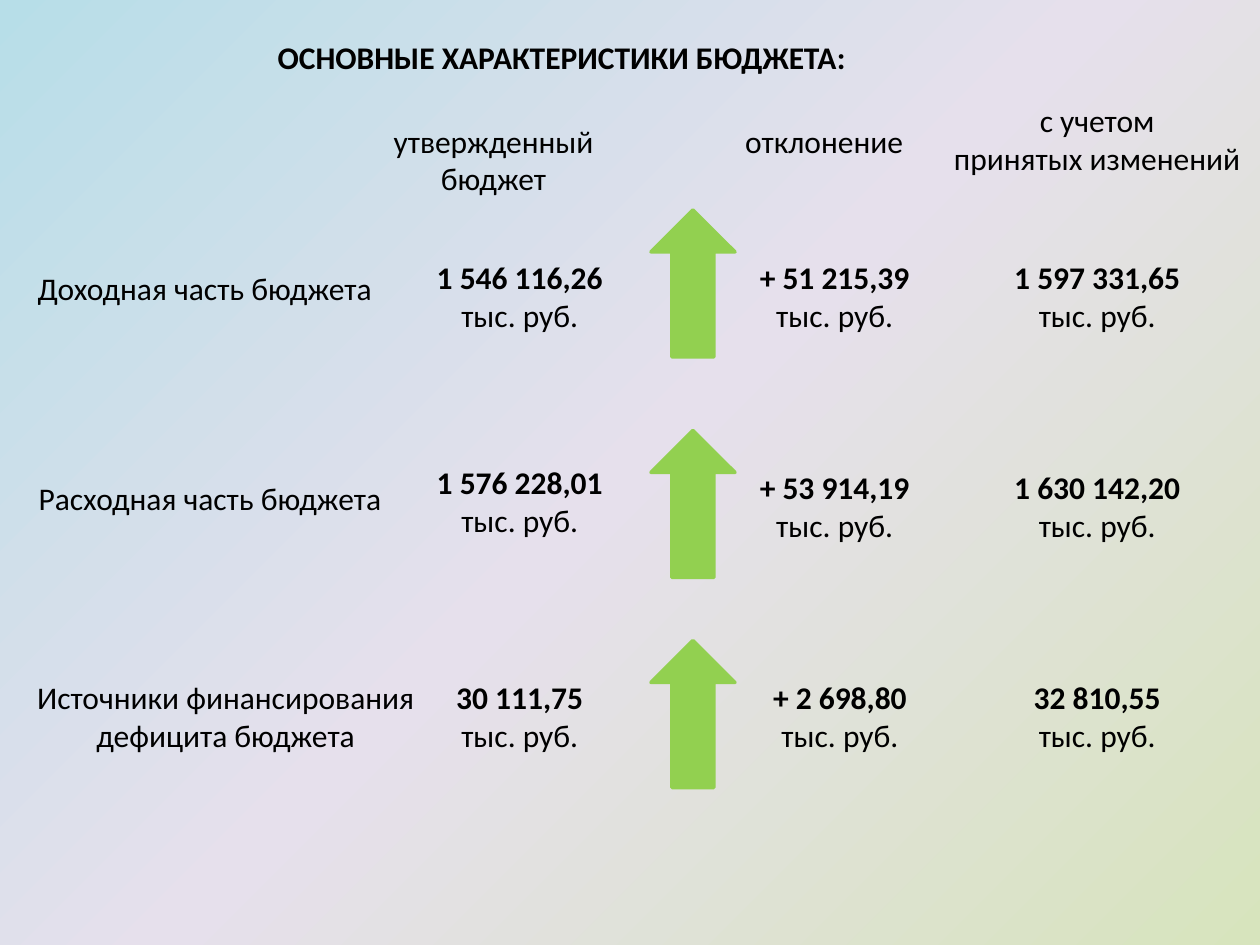
from lxml import etree
from pptx import Presentation
from pptx.dml.color import RGBColor
from pptx.enum.shapes import MSO_SHAPE
from pptx.enum.text import MSO_AUTO_SIZE, PP_ALIGN
from pptx.oxml.ns import qn
from pptx.util import Pt

UP_ARROW = MSO_SHAPE.UP_ARROW
CENTER = PP_ALIGN.CENTER
FIT_SHAPE = MSO_AUTO_SIZE.SHAPE_TO_FIT_TEXT

FONT = "Calibri"
FONT_SIZE = 18
BLACK = "000000"
GREEN = "92D050"
GRADIENT = [(0, "D7E4BD"), (50, "E6E0EC"), (100, "B7DEE8")]
UNIT = "тыс. руб."

TITLE = ("ОСНОВНЫЕ ХАРАКТЕРИСТИКИ БЮДЖЕТА:", 150, 18, 342)
HEADINGS = [
    (["утвержденный бюджет"], 198, 66, 168),
    (["отклонение"], 414, 66, 114),
    (["с учетом", "принятых изменений"], 534, 54, 186),
]
LABEL_LEFT = 12
ARROW_LEFT, ARROW_WIDTH, ARROW_HEIGHT = 372, 48, 84
ROWS = [
    {
        "label": ("Доходная часть бюджета", 150, 210),
        "arrow_top": 120,
        "amounts": [
            ("1 546 116,26", 240, 144, 114),
            ("+ 51 215,39", 426, 144, 102),
            ("1 597 331,65", 558, 144, 138),
        ],
    },
    {
        "label": ("Расходная часть бюджета", 270, 216),
        "arrow_top": 246,
        "amounts": [
            ("1 576 228,01", 240, 261, 114),
            ("+ 53 914,19", 426, 264, 102),
            ("1 630 142,20", 570, 264, 114),
        ],
    },
    {
        "label": ("Источники финансирования дефицита бюджета", 384, 234),
        "arrow_top": 366,
        "amounts": [
            ("30 111,75", 240, 384, 114),
            ("+ 2 698,80", 426, 384, 108),
            ("32 810,55", 570, 384, 114),
        ],
    },
]


def color(value):
    return RGBColor.from_string(value)


def paint_background(slide):
    slide.background.fill.gradient()
    gradient = slide.element.find(".//" + qn("a:gradFill"))
    for child in list(gradient):
        gradient.remove(child)
    stops = etree.SubElement(gradient, qn("a:gsLst"))
    for position, value in GRADIENT:
        stop = etree.SubElement(stops, qn("a:gs"), pos=str(position * 1000))
        etree.SubElement(stop, qn("a:srgbClr"), val=value)
    shade = etree.SubElement(gradient, qn("a:path"), {"path": "circle"})
    etree.SubElement(shade, qn("a:fillToRect"), l="100000", t="100000")


def add_text(slide, lines, left, top, width, wrap=True):
    height = 51 if len(lines) > 1 or len(lines[0][0]) * 9 > width else 29
    box = slide.shapes.add_textbox(Pt(left), Pt(top), Pt(width), Pt(height))
    frame = box.text_frame
    frame.word_wrap = wrap
    frame.auto_size = FIT_SHAPE
    for index, (text, bold) in enumerate(lines):
        paragraph = frame.add_paragraph() if index else frame.paragraphs[0]
        paragraph.alignment = CENTER
        run = paragraph.add_run()
        run.text = text
        run.font.name = FONT
        run.font.size = Pt(FONT_SIZE)
        run.font.bold = bold
        run.font.color.rgb = color(BLACK)


def add_arrow(slide, top):
    arrow = slide.shapes.add_shape(
        UP_ARROW, Pt(ARROW_LEFT), Pt(top), Pt(ARROW_WIDTH), Pt(ARROW_HEIGHT)
    )
    arrow.shadow.inherit = False
    arrow.fill.solid()
    arrow.fill.fore_color.rgb = color(GREEN)
    arrow.line.color.rgb = color(GREEN)
    arrow.line.width = Pt(2)


def main():
    presentation = Presentation()
    presentation.slide_width = Pt(720)
    presentation.slide_height = Pt(540)
    slide = presentation.slides.add_slide(presentation.slide_layouts[6])
    paint_background(slide)

    title, left, top, width = TITLE
    add_text(slide, [(title, True)], left, top, width, wrap=False)
    for lines, left, top, width in HEADINGS:
        add_text(slide, [(line, False) for line in lines], left, top, width)
    for row in ROWS:
        label, top, width = row["label"]
        add_text(slide, [(label, False)], LABEL_LEFT, top, width)
        add_arrow(slide, row["arrow_top"])
        for amount, left, top, width in row["amounts"]:
            add_text(slide, [(amount, True), (UNIT, False)], left, top, width)

    presentation.save("out.pptx")


if __name__ == "__main__":
    main()
